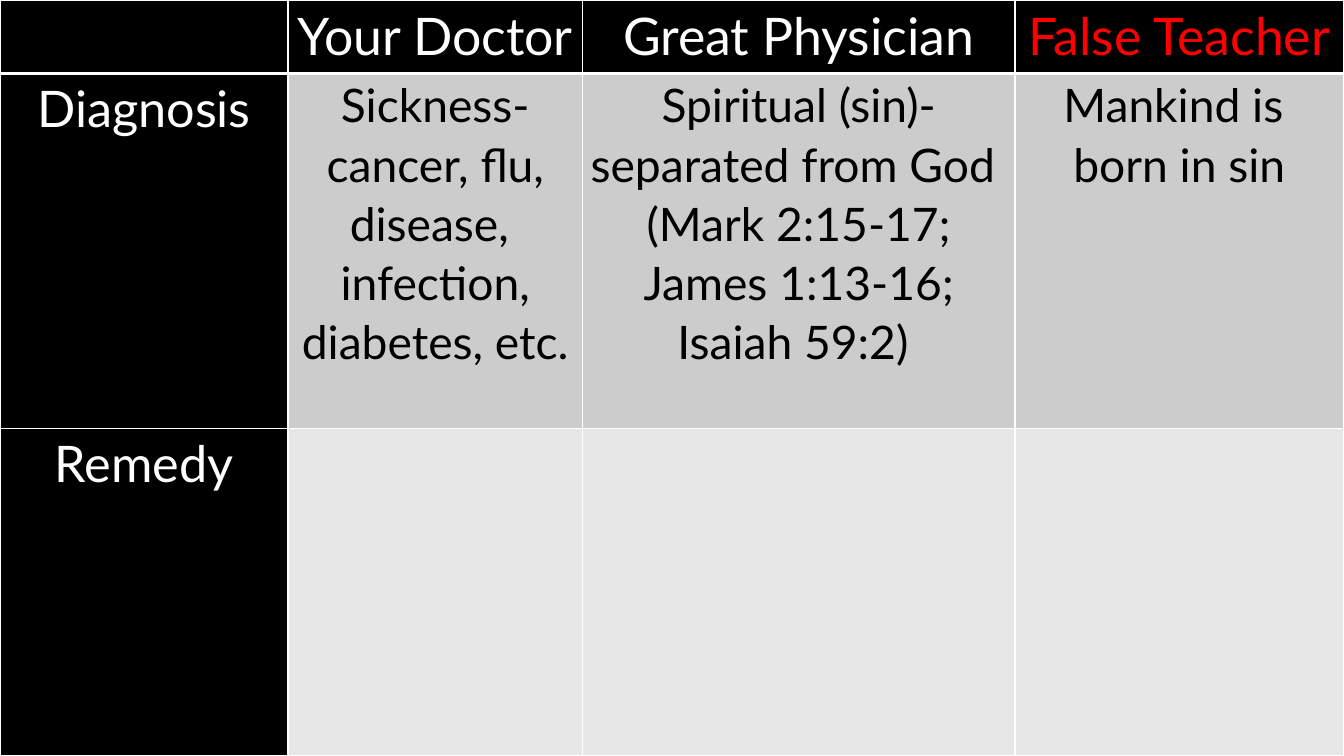
from dataclasses import dataclass

from lxml import etree
from pptx import Presentation
from pptx.dml.color import RGBColor
from pptx.enum.text import PP_ALIGN
from pptx.oxml.ns import qn
from pptx.slide import Slide
from pptx.table import Table, _Cell
from pptx.util import Cm, Pt

CENTER = PP_ALIGN.CENTER


@dataclass(frozen=True)
class Theme:
    font: str = "Lato"
    black: str = "000000"
    white: str = "FFFFFF"
    red: str = "FF0000"
    diagnosis_fill: str = "CCCCCC"
    remedy_fill: str = "E7E7E7"
    heading_size: float = 37
    label_size: float = 36
    body_size: float = 33
    line_spacing: float = 1.07
    thin_border: float = 1
    header_border: float = 3


@dataclass(frozen=True)
class Entry:
    text: str
    fill: str
    color: str
    size: float


THEME = Theme()
SLIDE_WIDTH, SLIDE_HEIGHT = Cm(33.87), Cm(19.05)
COLUMN_WIDTHS = [Cm(7.26), Cm(7.42), Cm(10.9), Cm(8.28)]
ROW_HEIGHTS = [Cm(1.85), Cm(8.94), Cm(8.26)]
SIDE_MARGIN = Cm(0.18)


def heading(text: str, color: str = THEME.white) -> Entry:
    return Entry(text, THEME.black, color, THEME.heading_size)


def label(text: str) -> Entry:
    return Entry(text, THEME.black, THEME.white, THEME.label_size)


def body(text: str, fill: str) -> Entry:
    return Entry(text, fill, THEME.black, THEME.body_size)


COMPARISON = [
    [
        heading(""),
        heading("Your Doctor"),
        heading("Great Physician"),
        heading("False Teacher", THEME.red),
    ],
    [
        label("Diagnosis"),
        body(
            "Sickness-\ncancer, flu, disease, \ninfection, diabetes, etc.",
            THEME.diagnosis_fill,
        ),
        body(
            "Spiritual (sin)- separated from God \n"
            "(Mark 2:15-17; James 1:13-16; Isaiah 59:2) ",
            THEME.diagnosis_fill,
        ),
        body("Mankind is \nborn in sin", THEME.diagnosis_fill),
    ],
    [label("Remedy")] + [body("", THEME.remedy_fill)] * 3,
]


def set_borders(cell: _Cell, top: float, bottom: float) -> None:
    """Put white lines on all four sides, ahead of the cell's fill."""
    properties = cell._tc.get_or_add_tcPr()
    widths = {"L": THEME.thin_border, "R": THEME.thin_border, "T": top, "B": bottom}
    for position, (side, width) in enumerate(widths.items()):
        line = etree.Element(qn(f"a:ln{side}"), w=str(Pt(width)))
        solid = etree.SubElement(line, qn("a:solidFill"))
        etree.SubElement(solid, qn("a:srgbClr"), val=THEME.white)
        properties.insert(position, line)


def fill_cell(cell: _Cell, entry: Entry) -> None:
    cell.fill.solid()
    cell.fill.fore_color.rgb = RGBColor.from_string(entry.fill)
    cell.margin_left = cell.margin_right = SIDE_MARGIN
    cell.margin_top = cell.margin_bottom = 0
    cell.text_frame.text = entry.text
    for paragraph in cell.text_frame.paragraphs:
        paragraph.alignment = CENTER
        paragraph.line_spacing = THEME.line_spacing
        for run in paragraph.runs:
            run.font.name = THEME.font
            run.font.size = Pt(entry.size)
            run.font.bold = False
            run.font.color.rgb = RGBColor.from_string(entry.color)


def add_comparison(slide: Slide) -> Table:
    table = slide.shapes.add_table(
        len(ROW_HEIGHTS), len(COLUMN_WIDTHS), 0, 0, sum(COLUMN_WIDTHS), sum(ROW_HEIGHTS)
    ).table
    for column, width in zip(table.columns, COLUMN_WIDTHS):
        column.width = width
    for row, height in zip(table.rows, ROW_HEIGHTS):
        row.height = height

    # The line under the header row is heavier than the others
    for row_index, entries in enumerate(COMPARISON):
        top = THEME.header_border if row_index == 1 else THEME.thin_border
        bottom = THEME.header_border if row_index == 0 else THEME.thin_border
        for column_index, entry in enumerate(entries):
            cell = table.cell(row_index, column_index)
            fill_cell(cell, entry)
            set_borders(cell, top, bottom)
    return table


def main() -> None:
    presentation = Presentation()
    presentation.slide_width, presentation.slide_height = SLIDE_WIDTH, SLIDE_HEIGHT
    slide = presentation.slides.add_slide(presentation.slide_layouts[6])

    # Black background
    slide.background.fill.solid()
    slide.background.fill.fore_color.rgb = RGBColor.from_string(THEME.black)

    # Diagnosis and remedy by kind of healer
    add_comparison(slide)
    presentation.save("out.pptx")


if __name__ == "__main__":
    main()
